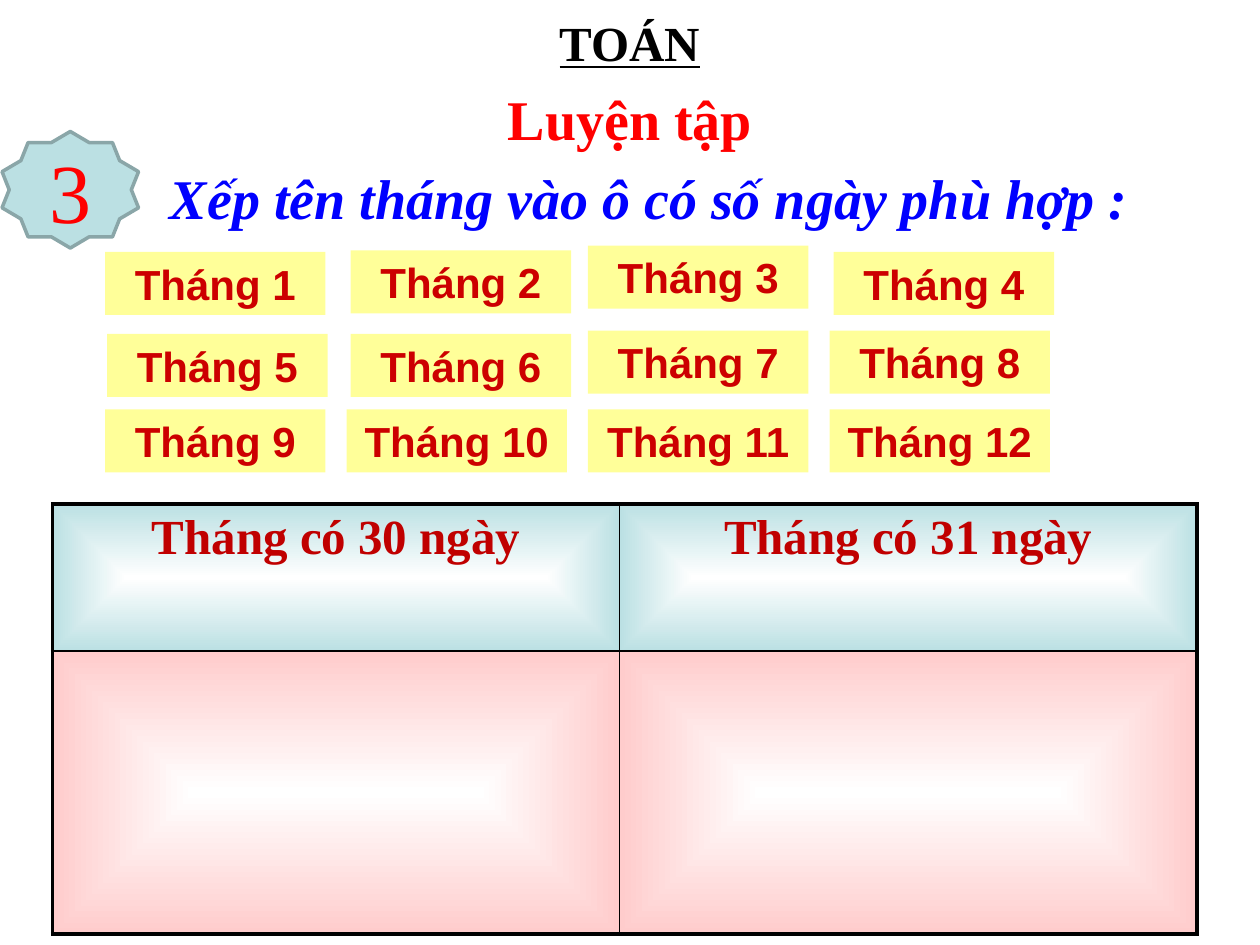
from pptx import Presentation
from pptx.dml.color import RGBColor
from pptx.enum.shapes import MSO_SHAPE
from pptx.enum.text import MSO_ANCHOR, PP_ALIGN
from pptx.oxml import parse_xml
from pptx.oxml.ns import nsdecls
from pptx.util import Inches, Pt

RECTANGLE, STAR = MSO_SHAPE.RECTANGLE, MSO_SHAPE.STAR_10_POINT
LEFT, CENTER = PP_ALIGN.LEFT, PP_ALIGN.CENTER
TOP, MIDDLE = MSO_ANCHOR.TOP, MSO_ANCHOR.MIDDLE

BLACK = RGBColor(0x00, 0x00, 0x00)
BLUE = RGBColor(0x00, 0x00, 0xFF)
RED = RGBColor(0xFF, 0x00, 0x00)
MONTH_RED = RGBColor(0xCC, 0x00, 0x00)
HEADER_RED = RGBColor(0xC0, 0x00, 0x00)
YELLOW = RGBColor(0xFF, 0xFF, 0x99)
TEAL = RGBColor(0xBB, 0xE0, 0xE3)
TEAL_EDGE = RGBColor(0x8A, 0xA6, 0xA8)
PINK = RGBColor(0xFF, 0xCC, 0xCC)

SERIF = "Times New Roman"
OUTER, INNER = Pt(2.25), Pt(1)

prs = Presentation()
prs.slide_width, prs.slide_height = Inches(10), Inches(7.5)
slide = prs.slides.add_slide(prs.slide_layouts[6])

# The slide is a grid of 12 columns by 12 rows
COL, ROW = prs.slide_width / 12, prs.slide_height / 12


def place(left, top, width, height):
    """Turn grid columns and rows into slide lengths."""
    return int(left * COL), int(top * ROW), int(width * COL), int(height * ROW)


def write(frame, text, color, align=CENTER, anchor=TOP, **font_format):
    frame.word_wrap = True
    frame.vertical_anchor = anchor
    paragraph = frame.paragraphs[0]
    paragraph.alignment = align
    run = paragraph.add_run()
    run.text = text
    run.font.color.rgb = color
    for name, value in font_format.items():
        setattr(run.font, name, value)


# Headings
headings = [
    ("TOÁN", (0, 0.08, 12, 0.92), BLACK, CENTER,
     dict(size=Pt(28), underline=True)),
    ("Luyện tập", (4.65, 1, 2.7, 1.02), RED, CENTER, dict(size=Pt(32))),
    ("Xếp tên tháng vào ô có số ngày phù hợp :", (1.5, 2, 10.5, 1.02), BLUE,
     LEFT, dict(size=Pt(32), italic=True)),
]
for text, area, color, align, font_format in headings:
    heading = slide.shapes.add_textbox(*place(*area))
    write(heading.text_frame, text, color, align, name=SERIF, bold=True, **font_format)

# Exercise number
badge = slide.shapes.add_shape(STAR, *place(0.02, 1.67, 1.3, 1.48))
badge.shadow.inherit = False
badge.fill.solid()
badge.fill.fore_color.rgb = TEAL
badge.line.color.rgb = TEAL_EDGE
badge.line.width = Pt(2)
write(badge.text_frame, "3", RED, anchor=MIDDLE, name=SERIF, size=Pt(48))

# Month cards, four to a row; some sit slightly off the grid
offsets = {2: (0.04, -0.02), 3: (0, -0.08), 4: (0.04, 0),
           5: (0.02, 0.04), 6: (0.04, 0.04)}
for month in range(1, 13):
    row, column = divmod(month - 1, 4)
    dx, dy = offsets.get(month, (0, 0))
    card = slide.shapes.add_shape(
        RECTANGLE, *place(1 + 2.3 * column + dx, 3.2 + row + dy, 2.1, 0.8))
    card.shadow.inherit = False
    card.fill.solid()
    card.fill.fore_color.rgb = YELLOW
    card.line.fill.background()
    write(card.text_frame, f"Tháng {month}", MONTH_RED,
          name="Arial", size=Pt(24), bold=True)

# Sorting table
column_spans, row_spans = (5.4, 5.5), (1.87, 3.59)
table = slide.shapes.add_table(
    2, 2, *place(0.5, 6.4, sum(column_spans), sum(row_spans))).table
table.first_row = table.horz_banding = False
for column, span in zip(table.columns, column_spans):
    column.width = int(span * COL)
for row, span in zip(table.rows, row_spans):
    row.height = int(span * ROW)

for column, title in enumerate(("Tháng có 30 ngày", "Tháng có 31 ngày")):
    write(table.cell(0, column).text_frame, title, HEADER_RED,
          name=SERIF, size=Pt(28), bold=True)
    for row, tint in enumerate((TEAL, PINK)):
        properties = table.cell(row, column)._tc.get_or_add_tcPr()
        on_outside = {"L": column == 0, "R": column == 1, "T": row == 0, "B": row == 1}
        for side, outside in on_outside.items():
            properties.append(parse_xml(
                f'<a:ln{side} {nsdecls("a")} w="{OUTER if outside else INNER}">'
                f'<a:solidFill><a:srgbClr val="{BLACK}"/></a:solidFill></a:ln{side}>'))
        properties.append(parse_xml(
            f'<a:gradFill {nsdecls("a")} rotWithShape="1"><a:gsLst>'
            '<a:gs pos="0"><a:srgbClr val="FFFFFF"/></a:gs>'
            f'<a:gs pos="100000"><a:srgbClr val="{tint}"/></a:gs></a:gsLst>'
            '<a:path path="shape">'
            '<a:fillToRect l="50000" t="50000" r="50000" b="50000"/>'
            '</a:path></a:gradFill>'))

prs.save("out.pptx")
